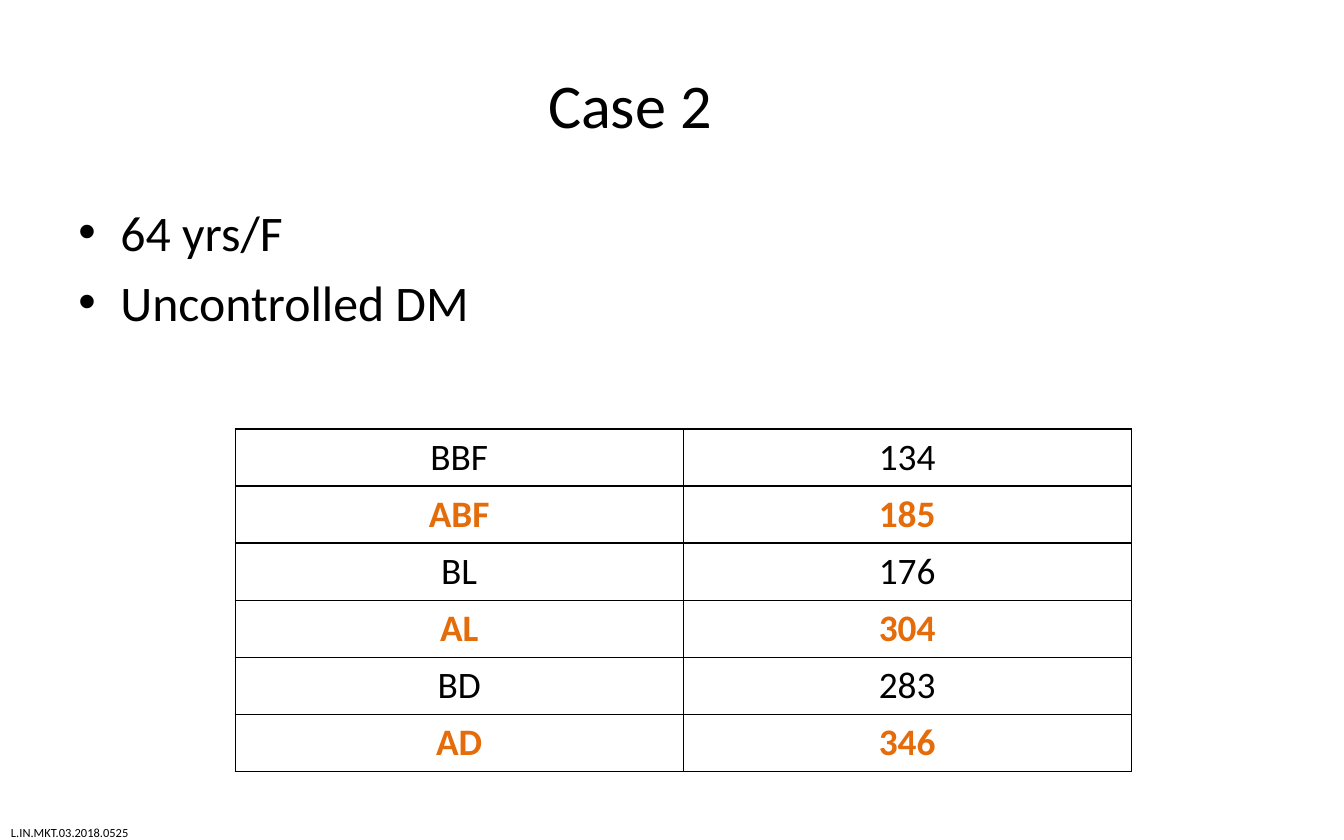
from lxml.etree import SubElement
from pptx import Presentation
from pptx.dml.color import RGBColor
from pptx.enum.dml import MSO_THEME_COLOR
from pptx.enum.text import MSO_ANCHOR, PP_ALIGN as Align
from pptx.oxml.ns import qn
from pptx.util import Inches, Pt

WIDTH, HEIGHT = 12, 7.5
FONT, BLACK, ORANGE = "Calibri", "000000", "E46C0A"
FINDINGS = ["64 yrs/F", "Uncontrolled DM"]
READINGS = [("BBF", 134), ("ABF", 185), ("BL", 176), ("AL", 304), ("BD", 283), ("AD", 346)]
COLUMN_WIDTH, ROW_HEIGHT = 4, 0.51


def color(value):
    """Turn a hex string into a colour."""
    return RGBColor.from_string(value)


def style(para, size, ink=BLACK, bold=False, align=None):
    """Set the font and alignment of a paragraph."""
    para.font.name, para.font.size, para.font.bold = FONT, Pt(size), bold
    para.font.color.rgb = color(ink)
    para.alignment = align


def fill_placeholder(box, place, lines, size, align=None):
    """Move a placeholder and write one paragraph for each line."""
    box.left, box.top, box.width, box.height = map(Inches, place)
    box.text_frame.text = "\n".join(lines)
    for para in box.text_frame.paragraphs:
        style(para, size, align=align)


def add_label(page, place, text, size):
    """Add a small unwrapped line of text."""
    box = page.shapes.add_textbox(*map(Inches, place))
    box.text_frame.word_wrap = False
    para = box.text_frame.paragraphs[0]
    para.text = text
    style(para, size)


def set_borders(cell, ink, width):
    """Draw all four edges of a cell."""
    properties = cell._tc.get_or_add_tcPr()
    for position, edge in enumerate(("lnL", "lnR", "lnT", "lnB")):
        line = SubElement(properties, qn(f"a:{edge}"), w=str(Pt(width)))
        properties.insert(position, line)
        SubElement(SubElement(line, qn("a:solidFill")), qn("a:srgbClr"), val=ink)


def format_cell(cell, text, ink, bold):
    """Write a centred cell without fill and with a thin border."""
    cell.fill.background()
    cell.margin_left = cell.margin_right = Inches(0.12)
    cell.margin_top = cell.margin_bottom = Inches(0.05)
    para = cell.text_frame.paragraphs[0]
    para.text = text
    style(para, 24, ink, bold, Align.CENTER)
    set_borders(cell, BLACK, 1)


def add_readings(page, left, top, readings):
    """Add the table of readings, with every second row highlighted."""
    rows, columns = len(readings), len(readings[0])
    size = (columns * COLUMN_WIDTH, rows * ROW_HEIGHT)
    table = page.shapes.add_table(rows, columns, *map(Inches, (left, top, *size))).table
    table.first_row = table.horz_banding = False
    for row, values in enumerate(readings):
        highlighted = row % 2 == 1
        for column, value in enumerate(values):
            ink = ORANGE if highlighted else BLACK
            format_cell(table.cell(row, column), str(value), ink, highlighted)


def main():
    """Build the slide and save it."""
    deck = Presentation()
    deck.slide_width, deck.slide_height = Inches(WIDTH), Inches(HEIGHT)
    page = deck.slides.add_slide(deck.slide_layouts[1])
    title, body = page.placeholders
    fill_placeholder(title, (0.3, 0.3, 10.65, 1.25), ["Case 2"], 40, Align.CENTER)
    title.text_frame.vertical_anchor = MSO_ANCHOR.MIDDLE
    fill_placeholder(body, (WIDTH * 0.05, 1.75, WIDTH * 0.9, 4.95), FINDINGS, 32)
    add_readings(page, 2.1, 3.83, READINGS)
    add_label(page, (0, 7.32, 1.4, 0.24), "L.IN.MKT.03.2018.0525", 8)
    deck.save("out.pptx")


if __name__ == "__main__":
    main()
